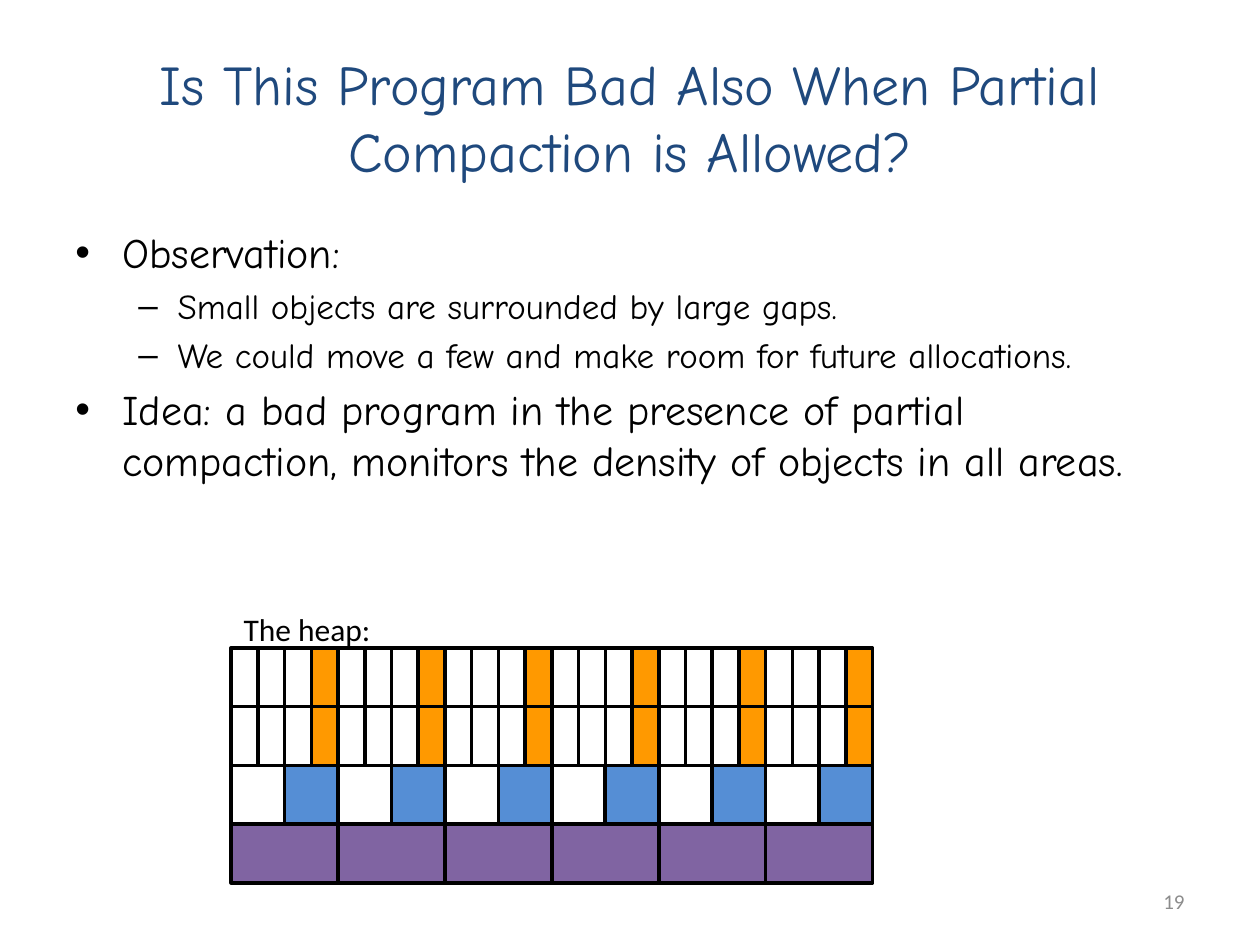
from lxml.etree import SubElement
from pptx import Presentation
from pptx.dml.color import RGBColor
from pptx.enum.shapes import MSO_SHAPE
from pptx.enum.text import MSO_ANCHOR, PP_ALIGN
from pptx.oxml.ns import qn
from pptx.util import Cm, Pt

WHITE, ORANGE, BLUE, PURPLE = "FFFFFF", "FF9900", "558ED5", "8064A2"
HEAP_LEFT, HEAP_TOP, HEAP_WIDTH, HEAP_HEIGHT = 4.66, 13.06, 12.93, 4.74
HEAP_ROWS = [
    [WHITE, WHITE, WHITE, ORANGE] * 6,
    [WHITE, WHITE, WHITE, ORANGE] * 6,
    [WHITE, BLUE] * 6,
    [PURPLE] * 6,
]


def rgb(value):
    return RGBColor.from_string(value)


def write(p, text, *, size, font, color="000000", align=PP_ALIGN.LEFT,
          bullet=None, margin=0, hanging=0, level=0):
    p.alignment = align
    p.level = level
    if bullet:
        p.space_before = Pt(size * 0.2)
        pPr = p._p.get_or_add_pPr()
        pPr.set("marL", str(Cm(margin)))
        pPr.set("indent", str(-Cm(hanging)))
        SubElement(pPr, qn("a:buFont")).set("typeface", "Arial")
        SubElement(pPr, qn("a:buChar")).set("char", bullet)
    r = p.add_run()
    r.text = text
    r.font.size = Pt(size)
    r.font.name = font
    r.font.color.rgb = rgb(color)


class Deck:
    """Holds the style and the current slide, and adds elements to it."""

    hand, plain = "Comic Neue", "Calibri"
    levels = [
        dict(size=24, bullet="•", margin=0.95, hanging=0.95),
        dict(size=20, bullet="–", margin=2.06, hanging=0.79),
    ]

    def __init__(self, prs):
        self.s = prs.slides.add_slide(prs.slide_layouts[6])

    def frame(self, x, y, w, h, anchor=MSO_ANCHOR.TOP, shapes=None):
        shapes = shapes or self.s.shapes
        tf = shapes.add_textbox(Cm(x), Cm(y), Cm(w), Cm(h)).text_frame
        tf.word_wrap = True
        tf.vertical_anchor = anchor
        return tf

    def text(self, box, text, anchor=MSO_ANCHOR.TOP, shapes=None, **style):
        write(self.frame(*box, anchor, shapes).paragraphs[0], text, **style)

    def bullets(self, box, items):
        tf = self.frame(*box)
        for i, (level, text) in enumerate(items):
            p = tf.add_paragraph() if i else tf.paragraphs[0]
            write(p, text, font=self.hand, level=level, **self.levels[level])

    def cell(self, shapes, x, y, w, h, color):
        sp = shapes.add_shape(MSO_SHAPE.RECTANGLE, Cm(x), Cm(y), Cm(w), Cm(h))
        sp.shadow.inherit = False
        sp.fill.solid()
        sp.fill.fore_color.rgb = rgb(color)
        sp.line.color.rgb = rgb("000000")
        sp.line.width = Pt(2)

    def heap(self, rows):
        shapes = self.s.shapes.add_group_shape().shapes
        self.text((HEAP_LEFT, 12.17, 4.17, 0.64), "The heap:", shapes=shapes,
                  size=18, font=self.plain)
        h = HEAP_HEIGHT / len(rows)
        for i, colors in enumerate(rows):
            w = HEAP_WIDTH / len(colors)
            for j, color in enumerate(colors):
                self.cell(shapes, HEAP_LEFT + j * w, HEAP_TOP + i * h, w, h, color)


def main():
    prs = Presentation()
    prs.slide_width, prs.slide_height = Cm(25.4), Cm(19.05)
    deck = Deck(prs)
    deck.text((1.27, 0.76, 22.86, 3.18),
              "Is This Program Bad Also When Partial Compaction is Allowed?",
              MSO_ANCHOR.MIDDLE, size=32, font=deck.hand, color="1F497D",
              align=PP_ALIGN.CENTER)
    deck.bullets((1.27, 4.45, 22.86, 12.7), [
        (0, "Observation:"),
        (1, "Small objects are surrounded by large gaps."),
        (1, "We could move a few and make room for future allocations."),
        (0, "Idea: a bad program in the presence of partial compaction, "
            "monitors the density of objects in all areas."),
    ])
    deck.text((18.2, 17.66, 5.93, 1.01), "19", MSO_ANCHOR.MIDDLE, size=12,
              font=deck.plain, color="8C8C8C", align=PP_ALIGN.RIGHT)
    deck.heap(HEAP_ROWS)
    prs.save("out.pptx")


if __name__ == "__main__":
    main()
